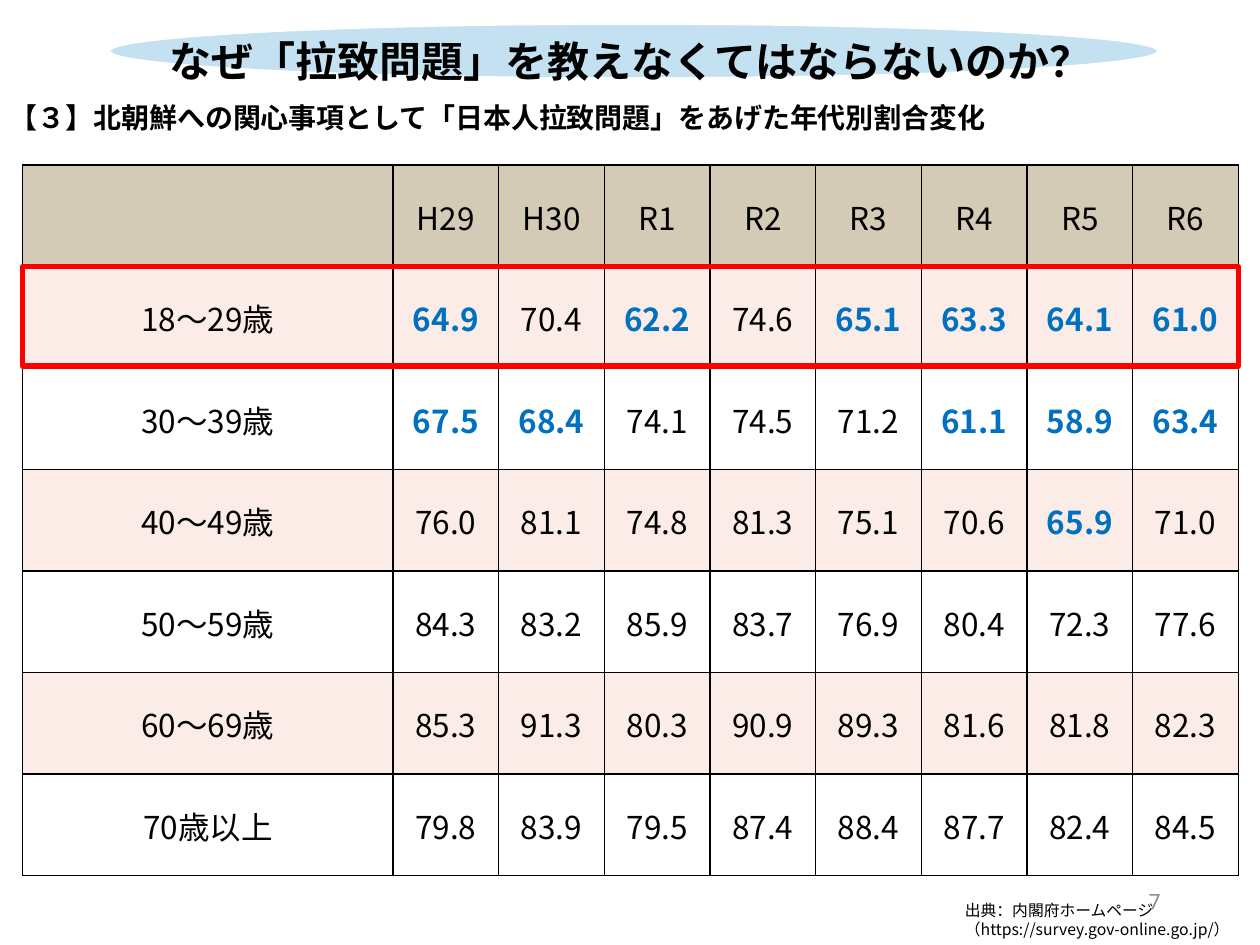
"""Build a slide with a table of interest in the abduction issue by age group."""
from pptx import Presentation
from pptx.dml.color import RGBColor
from pptx.enum.shapes import MSO_SHAPE as Shape
from pptx.enum.text import MSO_ANCHOR as Anchor, MSO_AUTO_SIZE as AutoSize, PP_ALIGN as Align
from pptx.oxml.ns import qn
from pptx.util import Inches, Pt
from lxml.etree import SubElement

TITLE = "なぜ「拉致問題」を教えなくてはならないのか？"
SUBTITLE = "【３】北朝鮮への関心事項として「日本人拉致問題」をあげた年代別割合変化"
SOURCE = ["出典：内閣府ホームページ", "（https://survey.gov-online.go.jp/）"]
PAGE = "7"
YEARS = ["H29", "H30", "R1", "R2", "R3", "R4", "R5", "R6"]
AGES = [
    ("18～29歳", [64.9, 70.4, 62.2, 74.6, 65.1, 63.3, 64.1, 61.0]),
    ("30～39歳", [67.5, 68.4, 74.1, 74.5, 71.2, 61.1, 58.9, 63.4]),
    ("40～49歳", [76.0, 81.1, 74.8, 81.3, 75.1, 70.6, 65.9, 71.0]),
    ("50～59歳", [84.3, 83.2, 85.9, 83.7, 76.9, 80.4, 72.3, 77.6]),
    ("60～69歳", [85.3, 91.3, 80.3, 90.9, 89.3, 81.6, 81.8, 82.3]),
    ("70歳以上", [79.8, 83.9, 79.5, 87.4, 88.4, 87.7, 82.4, 84.5]),
]
LOW_LIMIT = 70
THEME = {
    "font": "Noto Sans CJK JP", "page_font": "Roboto",
    "title": 24, "subtitle": 16, "cell": 18, "page": 12, "source": 9,
    "text": "000000", "low": "0070C0", "muted": "898989",
    "header": "D3CBB6", "band": "FCECE7", "plain": "FFFFFF",
    "ellipse": "C4E1F2", "frame": "FF0000",
}
LEFT, TOP, WIDTH, HEIGHT = 0.18, 1.31, 9.65, 5.64
LABEL_WIDTH = 2.94
ROW_HEIGHT = HEIGHT / (len(AGES) + 1)
YEAR_WIDTH = (WIDTH - LABEL_WIDTH) / len(YEARS)


def color(name):
    return RGBColor.from_string(THEME[name])


def write(tf, lines, size, ink="text", bold=False, align=Align.LEFT, font="font"):
    for i, line in enumerate(lines):
        p = tf.add_paragraph() if i else tf.paragraphs[0]
        p.text = line
        p.alignment = align
        p.font.name, p.font.size, p.font.bold = THEME[font], Pt(THEME[size]), bold
        p.font.color.rgb = color(ink)
        SubElement(p._p.pPr.find(qn("a:defRPr")), qn("a:ea"), typeface=THEME[font])


def add_text(slide, box, lines, size, anchor=Anchor.TOP, **style):
    tf = slide.shapes.add_textbox(*map(Inches, box)).text_frame
    tf.word_wrap = True
    tf.vertical_anchor = anchor
    write(tf, lines, size, **style)


def add_box(slide, kind, box, line, width, fill=None):
    sp = slide.shapes.add_shape(kind, *map(Inches, box))
    sp.shadow.inherit = False
    sp.line.color.rgb, sp.line.width = color(line), Pt(width)
    if fill:
        sp.fill.solid()
        sp.fill.fore_color.rgb = color(fill)
    else:
        sp.fill.background()


def add_borders(cell):
    tcPr = cell._tc.get_or_add_tcPr()
    for i, side in enumerate(("lnL", "lnR", "lnT", "lnB")):
        ln = SubElement(tcPr, qn(f"a:{side}"), w=str(Pt(1)))
        SubElement(SubElement(ln, qn("a:solidFill")), qn("a:srgbClr"), val=THEME["text"])
        tcPr.insert(i, ln)


def fill_cell(cell, text, fill, low):
    cell.fill.solid()
    cell.fill.fore_color.rgb = color(fill)
    cell.margin_left = cell.margin_right = cell.margin_top = Inches(0.01)
    cell.margin_bottom = 0
    cell.vertical_anchor = Anchor.MIDDLE
    write(cell.text_frame, [text], "cell", "low" if low else "text", low, Align.CENTER)
    add_borders(cell)


def add_age_table(slide):
    table = slide.shapes.add_table(
        len(AGES) + 1, len(YEARS) + 1, *map(Inches, (LEFT, TOP, WIDTH, HEIGHT))).table
    for i, col in enumerate(table.columns):
        col.width = Inches(YEAR_WIDTH if i else LABEL_WIDTH)
    for row in table.rows:
        row.height = Inches(ROW_HEIGHT)
    for c, year in enumerate([""] + YEARS):
        fill_cell(table.cell(0, c), year, "header", False)
    for r, (age, values) in enumerate(AGES, 1):
        fill = "band" if r % 2 else "plain"
        fill_cell(table.cell(r, 0), age, fill, False)
        for c, value in enumerate(values, 1):
            fill_cell(table.cell(r, c), f"{value:.1f}", fill, value < LOW_LIMIT)


def add_title(slide):
    title = slide.shapes.title
    title.left, title.top, title.width, title.height = map(Inches, (1.17, 0.23, 7.67, 0.5))
    tf = title.text_frame
    tf.auto_size, tf.vertical_anchor = AutoSize.NONE, Anchor.TOP
    write(tf, [TITLE], "title", bold=True, align=Align.CENTER)
    slide.shapes._spTree.append(title._element)


def main():
    prs = Presentation()
    prs.slide_width, prs.slide_height = Inches(10), Inches(7.5)
    slide = prs.slides.add_slide(prs.slide_layouts[5])
    add_text(slide, (7.06, 6.95, 2.25, 0.4), [PAGE], "page", Anchor.MIDDLE,
             ink="muted", align=Align.RIGHT, font="page_font")
    add_text(slide, (-0.02, 0.75, 10.01, 0.37), [SUBTITLE], "subtitle", bold=True)
    add_age_table(slide)
    add_text(slide, (7.56, 7.1, 2.65, 0.4), SOURCE, "source")
    add_box(slide, Shape.OVAL, (0.87, 0.19, 8.32, 0.43), "plain", 1, "ellipse")
    add_title(slide)
    add_box(slide, Shape.RECTANGLE, (LEFT, TOP + ROW_HEIGHT, WIDTH, 0.79), "frame", 3)
    prs.save("out.pptx")


if __name__ == "__main__":
    main()
